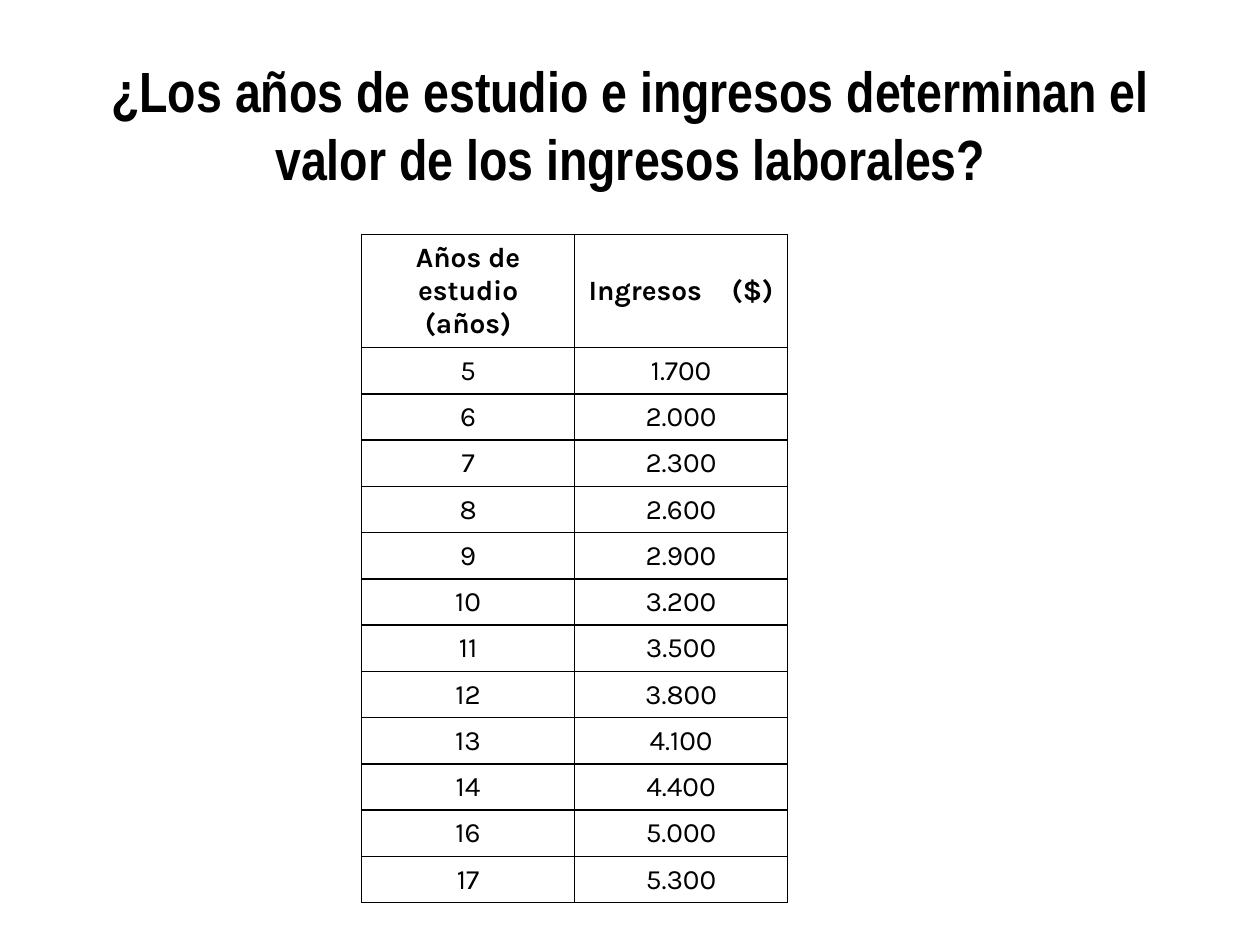
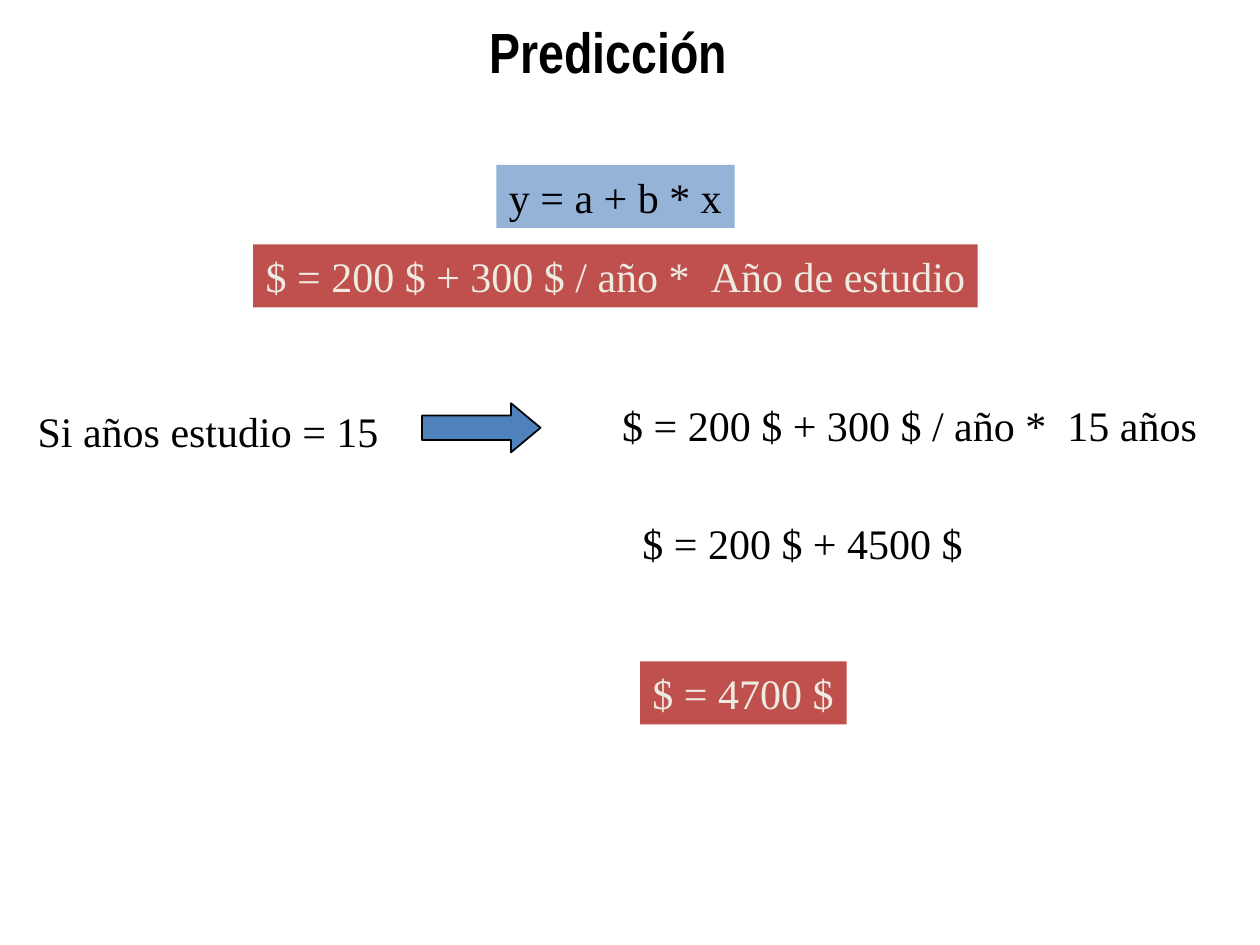
"""Builds two slides on predicting income from years of study."""
import pptx
import pptx.dml.color
import pptx.enum.shapes
import pptx.enum.text
import pptx.oxml
import pptx.oxml.ns
import pptx.util

BLACK, CREAM, RED = "000000", "EEECE1", "C0504D"
PALE_BLUE, BLUE = "95B3D7", "4F81BD"
TITLE_FONT, TABLE_FONT, BODY_FONT = "Arial Narrow", "Karla", "Times New Roman"
WIDTH, HEIGHT = 10, 7.5
BOX_HEIGHT = 0.5
GAP = "|"

TITLES = [
    ("¿Los años de estudio e ingresos determinan el valor de los ingresos laborales?",
     (0.43, 0.36, 9.15, 1.25)),
    ("Predicción ", (0.46, 0.05, 8.84, 0.7)),
]

HEADERS = ("Años de estudio (años)", "Ingresos|($)")
INCOMES = [
    ("5", "1.700"), ("6", "2.000"), ("7", "2.300"), ("8", "2.600"),
    ("9", "2.900"), ("10", "3.200"), ("11", "3.500"), ("12", "3.800"),
    ("13", "4.100"), ("14", "4.400"), ("16", "5.000"), ("17", "5.300"),
]
TABLE_AT = (2.87, 1.86, 3.38, 5.3)
HEADER_HEIGHT = 0.9

FORMULAS = [
    ("y = a + b * x", 3.94, 1.31, 1.89, PALE_BLUE, BLACK),
    ("$ = 200 $ + 300 $ / año *|Año de estudio", 2.01, 1.94, 5.75, RED, CREAM),
    ("Si años estudio = 15", 0.2, 3.17, 2.91, None, BLACK),
    ("$ = 200 $ + 300 $ / año *|15 años", 4.84, 3.12, 4.76, None, BLACK),
    ("$ = 200 $ + 4500 $", 5, 4.06, 2.74, None, BLACK),
    ("$ = 4700 $", 5.08, 5.25, 1.64, RED, CREAM),
]
ARROW_AT = (3.35, 3.2, 0.94, 0.39)

ANCHOR = pptx.enum.text.MSO_ANCHOR
SHAPE = pptx.enum.shapes.MSO_SHAPE


def rgb(color):
    """Turn a hex string into a colour."""
    return pptx.dml.color.RGBColor.from_string(color)


def inches(values):
    """Turn numbers into lengths in inches."""
    return [pptx.util.Inches(v) for v in values]


def write(tf, text, font, size, color, bold=False, centered=False, gap=0):
    """Write one paragraph, with a widened space of gap points at each mark."""
    p = tf.paragraphs[0]
    align = pptx.enum.text.PP_ALIGN
    p.alignment = align.CENTER if centered else align.LEFT
    for i, part in enumerate(text.split(GAP)):
        for piece in ([" ", part] if i else [part]):
            r = p.add_run()
            r.text = piece
            r.font.name, r.font.size = font, pptx.util.Pt(size)
            r.font.bold, r.font.color.rgb = bold, rgb(color)
            if piece == " ":
                r.font._element.set("spc", str(gap * 100))


def add_title(slide, text, at):
    """Add the bold centred title."""
    tf = slide.shapes.add_textbox(*inches(at)).text_frame
    tf.word_wrap = True
    tf.vertical_anchor = ANCHOR.MIDDLE
    write(tf, text, TITLE_FONT, 32.4, BLACK, bold=True, centered=True)


def add_borders(cell):
    """Draw a thin black line on each side of a cell."""
    pr = cell._tc.get_or_add_tcPr()
    for i, side in enumerate(("lnL", "lnR", "lnT", "lnB")):
        pr.insert(i, pptx.oxml.parse_xml(
            f'<a:{side} {pptx.oxml.ns.nsdecls("a")} w="12700"><a:solidFill>'
            f'<a:srgbClr val="{BLACK}"/></a:solidFill></a:{side}>'))


def add_income_table(slide):
    """Add the table of years of study and income."""
    rows = [HEADERS] + INCOMES
    table = slide.shapes.add_table(len(rows), len(HEADERS), *inches(TABLE_AT)).table
    table.first_row = table.horz_banding = False
    row_height = (TABLE_AT[3] - HEADER_HEIGHT) / len(INCOMES)
    for i, row in enumerate(rows):
        header = i == 0
        table.rows[i].height = pptx.util.Inches(HEADER_HEIGHT if header else row_height)
        for j, text in enumerate(row):
            cell = table.cell(i, j)
            cell.fill.background()
            cell.vertical_anchor = ANCHOR.MIDDLE if header else ANCHOR.BOTTOM
            write(cell.text_frame, text, TABLE_FONT, 16, BLACK,
                  bold=header, centered=True, gap=13)
            add_borders(cell)


def add_formula(slide, text, left, top, width, fill, color):
    """Add one line of the calculation, on a band if it has a fill."""
    at = inches((left, top, width, BOX_HEIGHT))
    if fill:
        sp = slide.shapes.add_shape(SHAPE.RECTANGLE, *at)
        sp.shadow.inherit = False
        sp.fill.solid()
        sp.fill.fore_color.rgb = rgb(fill)
        sp.line.fill.background()
    else:
        sp = slide.shapes.add_textbox(*at)
    tf = sp.text_frame
    tf.word_wrap = False
    tf.auto_size = pptx.enum.text.MSO_AUTO_SIZE.SHAPE_TO_FIT_TEXT
    tf.vertical_anchor = ANCHOR.TOP
    write(tf, text, BODY_FONT, 24, color, gap=6)


def add_arrow(slide):
    """Add the arrow from the condition to its result."""
    sp = slide.shapes.add_shape(SHAPE.RIGHT_ARROW, *inches(ARROW_AT))
    sp.shadow.inherit = False
    sp.adjustments[0], sp.adjustments[1] = 0.5, 0.6
    sp.fill.solid()
    sp.fill.fore_color.rgb = rgb(BLUE)
    sp.line.color.rgb = rgb(BLACK)
    sp.line.width = pptx.util.Pt(1)


def main():
    """Build and save the slides."""
    prs = pptx.Presentation()
    prs.slide_width, prs.slide_height = inches((WIDTH, HEIGHT))
    slides = []
    for text, at in TITLES:
        slide = prs.slides.add_slide(prs.slide_layouts[6])
        add_title(slide, text, at)
        slides.append(slide)
    data, prediction = slides
    add_income_table(data)
    for formula in FORMULAS:
        add_formula(prediction, *formula)
    add_arrow(prediction)
    prs.save("out.pptx")


if __name__ == "__main__":
    main()
